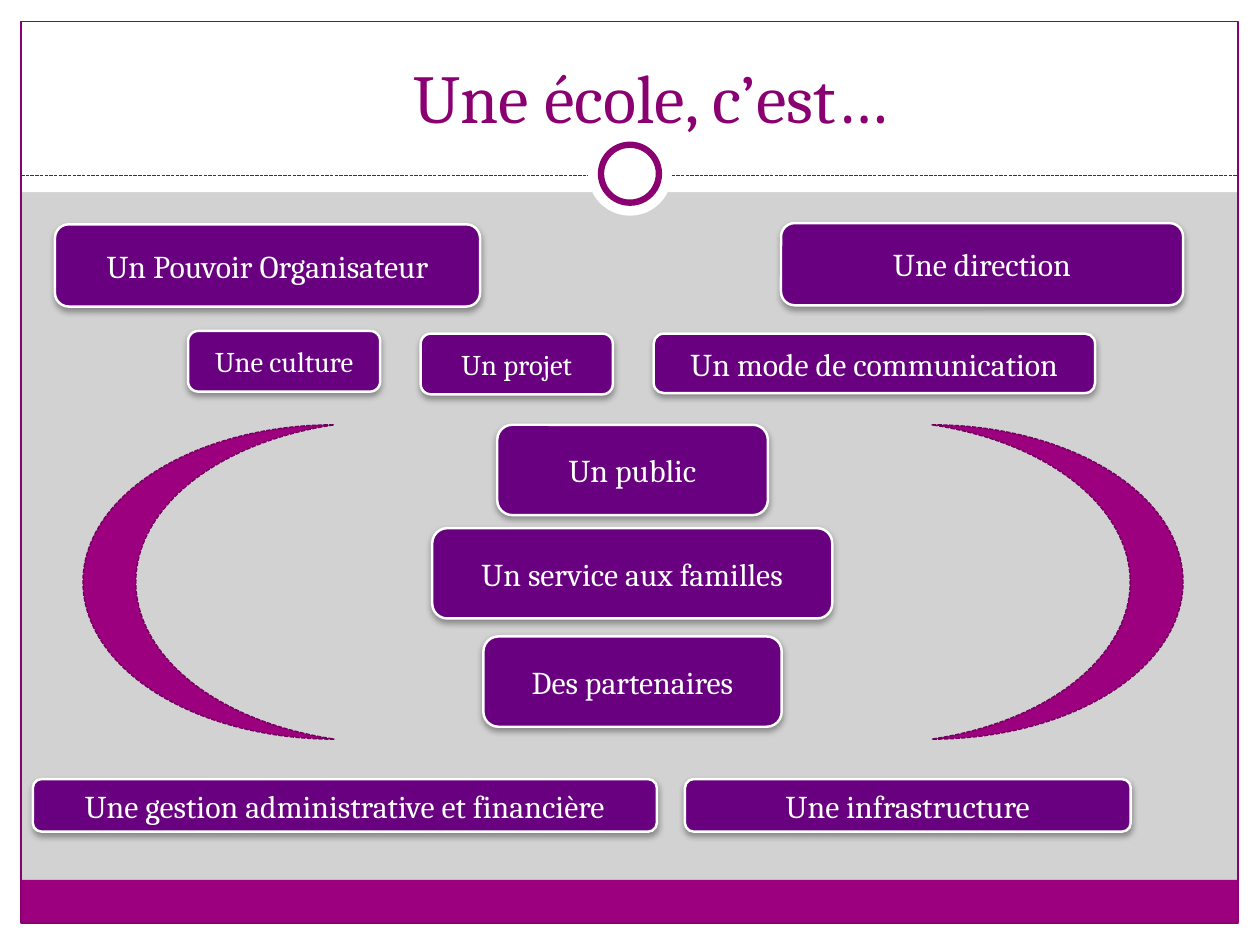
from lxml.etree import SubElement
from pptx import Presentation
from pptx.dml.color import RGBColor
from pptx.enum.dml import MSO_LINE
from pptx.enum.shapes import MSO_CONNECTOR, MSO_SHAPE
from pptx.enum.text import MSO_ANCHOR, PP_ALIGN
from pptx.oxml import parse_xml
from pptx.oxml.ns import nsdecls, qn
from pptx.util import Pt

COLOURS = {
    "background": "D2D2D2",
    "white": "FFFFFF",
    "band": "9C007F",
    "frame": "8A0070",
    "box": "68007F",
    "moon_edge": "73005E",
}
FONT = "Cambria"
WIDTH, HEIGHT = 793.7, 595.28
EDGE = 13.3


def add_figure(kind, bounds, fill=None, line=None, weight=0.75):
    figure = slide.shapes.add_shape(kind, *[Pt(length) for length in bounds])
    figure.shadow.inherit = False
    if fill:
        figure.fill.solid()
        figure.fill.fore_color.rgb = RGBColor.from_string(COLOURS[fill])
    else:
        figure.fill.background()
    if line:
        figure.line.color.rgb = RGBColor.from_string(COLOURS[line])
        figure.line.width = Pt(weight)
    else:
        figure.line.fill.background()
    return figure


def write(frame, words, size, colour):
    paragraph = frame.paragraphs[0]
    paragraph.alignment = PP_ALIGN.CENTER
    run = paragraph.add_run()
    run.text = words
    run.font.size = Pt(size)
    run.font.name = FONT
    run.font.color.rgb = RGBColor.from_string(COLOURS[colour])


deck = Presentation()
deck.slide_width, deck.slide_height = Pt(WIDTH), Pt(HEIGHT)
slide = deck.slides.add_slide(deck.slide_layouts[5])
slide.background.fill.solid()
slide.background.fill.fore_color.rgb = RGBColor.from_string(COLOURS["background"])

for margin in [
    (0, HEIGHT - EDGE, WIDTH, EDGE),
    (0, 0, WIDTH, 121),
    (0, 0, EDGE, HEIGHT),
    (WIDTH - EDGE, 0, EDGE, HEIGHT),
]:
    add_figure(MSO_SHAPE.RECTANGLE, margin, "white")

inner_width = 766.6
add_figure(MSO_SHAPE.RECTANGLE, (EDGE, 554.3, inner_width, 27), "band")
add_figure(MSO_SHAPE.RECTANGLE, (EDGE, 13.5, inner_width, 568), line="frame")

divider = slide.shapes.add_connector(
    MSO_CONNECTOR.STRAIGHT, Pt(EDGE), Pt(110.7), Pt(EDGE + inner_width), Pt(110.7)
)
divider.line.color.rgb = RGBColor.from_string(COLOURS["frame"])
divider.line.width = Pt(0.75)
divider.line.dash_style = MSO_LINE.SQUARE_DOT
SubElement(divider._element.spPr, qn("a:effectLst"))

add_figure(MSO_SHAPE.OVAL, (370.4, 83, 52.9, 52.9), "white")
add_figure(MSO_SHAPE.OVAL, (378.6, 91.2, 36.5, 36.5), "white", "frame", 4)

title = slide.shapes.title
title._element.getparent().append(title._element)
title.left, title.top, title.width, title.height = Pt(227.5), Pt(29), Pt(365), Pt(61.2)
title_frame = title.text_frame
title_frame.vertical_anchor = MSO_ANCHOR.BOTTOM
title_frame.margin_left = title_frame.margin_right = Pt(7.9)
title_frame.margin_top = title_frame.margin_bottom = Pt(4)
write(title_frame, "Une école, c’est…", 43.2, "frame")

for words, left, top, width, height, size in [
    ("Une direction", 492, 140.5, 253.3, 51.8, 20),
    ("Un public", 313.2, 267.6, 170.5, 56.9, 20),
    ("Une infrastructure", 431.5, 490.8, 280.8, 33.1, 20),
    ("Un projet", 265, 210.2, 121, 38.2, 18),
    ("Un mode de communication", 411.8, 210.2, 278, 37.4, 20),
    ("Un Pouvoir Organisateur", 34.6, 141.3, 267.8, 51.8, 20),
    ("Un service aux familles", 272.3, 332.7, 252, 56.9, 20),
    ("Des partenaires", 304.5, 400.9, 187.9, 56.9, 20),
    ("Une gestion administrative et financière", 20.7, 490.8, 393.1, 33.1, 20),
    ("Une culture", 118.5, 208.5, 121, 38.2, 18),
]:
    box = add_figure(
        MSO_SHAPE.ROUNDED_RECTANGLE, (left, top, width, height), "box", "white", 1.57
    )
    box._element.spPr.find(qn("a:effectLst")).append(parse_xml(
        f'<a:outerShdw {nsdecls("a")} blurRad="{Pt(4)}" dist="{Pt(2)}" dir="5400000" '
        'rotWithShape="0"><a:srgbClr val="000000"><a:alpha val="35000"/>'
        "</a:srgbClr></a:outerShdw>"
    ))
    box.text_frame.word_wrap = True
    box.text_frame.vertical_anchor = MSO_ANCHOR.MIDDLE
    write(box.text_frame, words, size, "white")

for left, angle in [(52.3, 0), (586.9, 180)]:
    moon = add_figure(
        MSO_SHAPE.MOON, (left, 267.6, 158.3, 198), "band", "moon_edge", 0.9
    )
    moon.adjustments[0] = 0.21
    moon.rotation = angle
    moon.line.dash_style = MSO_LINE.SQUARE_DOT

deck.save("out.pptx")
